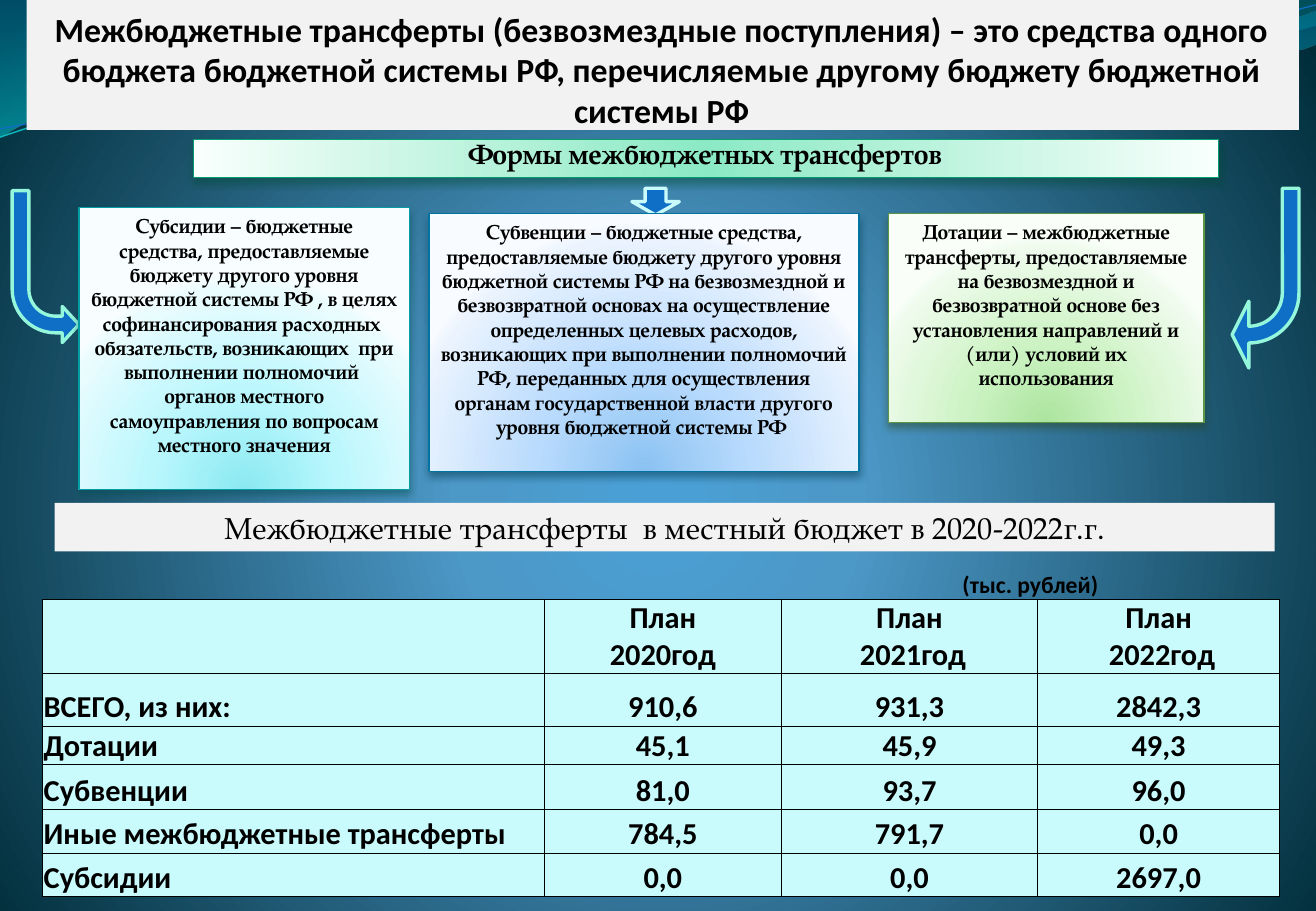
from dataclasses import dataclass

from lxml.etree import SubElement
from pptx import Presentation
from pptx.dml.color import RGBColor
from pptx.enum.shapes import MSO_SHAPE
from pptx.enum.text import MSO_ANCHOR, MSO_AUTO_SIZE, PP_ALIGN
from pptx.oxml.ns import qn
from pptx.util import Inches, Pt


@dataclass(frozen=True)
class Theme:
    sans: str = "Calibri"
    serif: str = "TeX Gyre Pagella"
    text: str = "000000"
    panel: str = "F2F2F2"
    cell: str = "C9FAFC"
    arrow: str = "0F6FC6"
    arrow_edge: str = "94F7DC"
    title_size: float = 20
    subtitle_size: float = 16.6
    card_size: float = 12
    table_size: float = 18
    unit_size: float = 14


THEME = Theme()
CIRCLE_BELOW = (50, 130, 50, -30)


# Formatting helpers
def set_gradient(properties, stops, angle=None, focus=None):
    """Replace the solid fill with stops of (position, colour, opacity)."""
    solid = properties.find(qn("a:solidFill"))
    gradient = SubElement(properties, qn("a:gradFill"), rotWithShape="1")
    properties.replace(solid, gradient)
    stop_list = SubElement(gradient, qn("a:gsLst"))
    for position, colour, *opacity in stops:
        stop = SubElement(stop_list, qn("a:gs"), pos=str(position * 1000))
        color = SubElement(stop, qn("a:srgbClr"), val=colour)
        if opacity:
            SubElement(color, qn("a:alpha"), val=str(opacity[0] * 1000))
    if focus:
        circle = SubElement(gradient, qn("a:path"), path="circle")
        sides = {side: str(value * 1000) for side, value in zip("ltrb", focus)}
        SubElement(circle, qn("a:fillToRect"), **sides)
    else:
        SubElement(gradient, qn("a:lin"), ang=str(angle * 60000), scaled="0")


def style_shape(shape, fill=None, line=None, width=0.75):
    shape.shadow.inherit = False
    if fill:
        shape.fill.solid()
        shape.fill.fore_color.rgb = RGBColor.from_string(fill)
    else:
        shape.fill.background()
    if line:
        shape.line.color.rgb = RGBColor.from_string(line)
        shape.line.width = Pt(width)
    else:
        shape.line.fill.background()


def add_shadow(shape, colour):
    effects = shape._element.spPr.find(qn("a:effectLst"))
    shadow = SubElement(effects, qn("a:outerShdw"), blurRad=str(Pt(4.5)),
                        dist=str(Pt(3)), dir="5400000", rotWithShape="0")
    color = SubElement(shadow, qn("a:srgbClr"), val=colour)
    SubElement(color, qn("a:alpha"), val="48000")


def place(shape, box):
    shape.left, shape.top, shape.width, shape.height = map(Inches, box)


def write(frame, lines, font, size, bold=True, align=PP_ALIGN.CENTER):
    """Each line is a paragraph; a vertical tab breaks a line inside it."""
    frame.word_wrap = True
    for index, line in enumerate(lines):
        paragraph = frame.add_paragraph() if index else frame.paragraphs[0]
        paragraph.alignment = align
        for part_index, part in enumerate(line.split("\v")):
            if part_index:
                paragraph.add_line_break()
            run = paragraph.add_run()
            run.text = part
            run.font.name, run.font.size, run.font.bold = font, Pt(size), bold
            run.font.color.rgb = RGBColor.from_string(THEME.text)


def set_insets(frame, left, top, right, bottom):
    frame.margin_left, frame.margin_top = Inches(left), Inches(top)
    frame.margin_right, frame.margin_bottom = Inches(right), Inches(bottom)


# Background with waves along the top
def add_wave(slide, points, closed):
    """Pairs are corners; six-number entries are cubic curves."""
    ends = [(Inches(entry[-2]), Inches(entry[-1])) for entry in points]
    builder = slide.shapes.build_freeform(*ends[0])
    builder.add_line_segments(ends[1:], close=closed)
    wave = builder.convert_to_shape()
    segments = wave._element.findall(".//" + qn("a:lnTo"))
    for segment, entry in zip(segments, points[1:]):
        if len(entry) == 6:
            segment.tag = qn("a:cubicBezTo")
            end = segment[0]
            for x, y in (entry[:2], entry[2:4]):
                end.addprevious(SubElement(segment, qn("a:pt"), x=str(Inches(x) - wave.left),
                                           y=str(Inches(y) - wave.top)))
    return wave


def add_background(slide):
    slide.background.fill.solid()
    set_gradient(slide._element.find(".//" + qn("p:bgPr")),
                 [(0, "4AA0D6"), (25, "4C98C7"), (100, "002C38")], focus=(10, 110, 10, 100))
    waves = [
        ([(0, -0.01), (4.77, -0.01), (5.15, 0.17, 7.19, 0.63, 8.22, 0.63),
          (9.24, 0.63, 10.38, 0.26, 10.83, 0.09), (10.85, 0.36),
          (10.65, 0.44, 9.42, 0.76, 8.08, 0.75), (6.74, 0.75, 4.14, 0.28, 2.79, 0.34),
          (1.4, 0.35, 0.5, 0.83, -0.01, 1.13)],
         [(0, "0074A1", 45), (100, "00C6CF", 55)], None, 0),
        ([(5.19, -0.01), (5.52, 0.11, 7.39, 0.62, 8.33, 0.65),
          (9.27, 0.69, 10.42, 0.32, 10.83, 0.21), (10.83, 0)],
         [(0, "00A1A9", 30), (80, "008BBF", 45)], None, 0),
        ([(0, 1.13), (0.52, 0.95, 1.71, 0.58, 3, 0.53), (4.28, 0.47, 6.42, 0.88, 7.72, 0.79),
          (9.02, 0.69, 10.17, 0.14, 10.81, -0.04)], None, "0AB8BF", 0.85),
        ([(0, 1.06), (0.51, 0.98, 1.77, 0.62, 3.07, 0.57), (4.36, 0.52, 6.47, 0.83, 7.76, 0.74),
          (9.06, 0.66, 10.2, 0.19, 10.83, 0.04)], None, "0F6FC6", 0.75),
    ]
    for index, (points, stops, line, width) in enumerate(waves):
        wave = add_wave(slide, points, bool(stops))
        style_shape(wave, stops and stops[0][1], line, width)
        if stops:
            set_gradient(wave._element.spPr, stops, angle=90)
        slide.shapes._spTree.insert(2 + index, wave._element)


# Title and heading of the transfer forms
def add_headings(slide, title_box, subtitle_box):
    title, subtitle = slide.shapes.title, slide.placeholders[1]
    place(title, title_box)
    style_shape(title, THEME.panel)
    write(title.text_frame, ["Межбюджетные трансферты (безвозмездные поступления) – это средства одного бюджета бюджетной системы РФ, перечисляемые другому бюджету бюджетной системы РФ"], THEME.sans, THEME.title_size)
    set_insets(title.text_frame, 0, 0, 0.02, 0)
    title.text_frame.vertical_anchor = MSO_ANCHOR.BOTTOM
    place(subtitle, subtitle_box)
    style_shape(subtitle, THEME.panel, "069C70")
    set_gradient(subtitle._element.spPr,
                 [(0, "F8FFFC"), (50, "8BE9C5"), (100, "F8FFFC")], angle=0)
    add_shadow(subtitle, "024B36")
    write(subtitle.text_frame, ["Формы межбюджетных трансфертов"], THEME.serif, THEME.subtitle_size)
    set_insets(subtitle.text_frame, 0, 0.05, 0.02, 0.05)
    subtitle.text_frame.vertical_anchor = MSO_ANCHOR.TOP
    paragraph = subtitle.text_frame.paragraphs[0]
    paragraph.line_spacing, paragraph.space_before = 0.7, Pt(3.3)
    for frame in (title.text_frame, subtitle.text_frame):
        frame.auto_size = MSO_AUTO_SIZE.NONE


def add_arrow(slide, kind, box, adjustments, edge=THEME.arrow_edge, flips=()):
    arrow = slide.shapes.add_shape(kind, *map(Inches, box))
    style_shape(arrow, THEME.arrow, edge, 2)
    for index, value in enumerate(adjustments):
        arrow.adjustments[index] = value
    for flip in flips:
        arrow._element.spPr.find(qn("a:xfrm")).set(flip, "1")


# Text panels
def add_panel(slide, box, text, size, fill, line=None, bold=True):
    panel = slide.shapes.add_shape(MSO_SHAPE.RECTANGLE, *map(Inches, box))
    style_shape(panel, fill, line)
    write(panel.text_frame, [text], THEME.serif, size, bold)
    panel.text_frame.vertical_anchor = MSO_ANCHOR.TOP
    return panel


def add_card(slide, box, text, colours, line, shadow):
    card = add_panel(slide, box, text, THEME.card_size, colours[0], line)
    set_gradient(card._element.spPr, list(zip((0, 43, 93, 100), colours)), focus=CIRCLE_BELOW)
    add_shadow(card, shadow)


# Table of transfers
def set_borders(cell, sides):
    properties = cell._tc.get_or_add_tcPr()
    for index, side in enumerate("LRTB"):
        border = SubElement(properties, qn("a:ln" + side), w=str(Pt(0.5)))
        properties.insert(index, border)
        if side in sides:
            SubElement(SubElement(border, qn("a:solidFill")), qn("a:srgbClr"), val=THEME.text)
        else:
            SubElement(border, qn("a:noFill"))


def add_transfer_table(slide, box):
    rows = [["", "", "(тыс. рублей)", ""],
            ["", "План\n2020год", "План\n 2021год", "План\n 2022год"],
            ["ВСЕГО, из них:", "910,6", "931,3", "2842,3"],
            ["Дотации", "45,1", "45,9", "49,3"],
            ["Субвенции", "81,0", "93,7", "96,0"],
            ["Иные межбюджетные трансферты", "784,5", "791,7", "0,0"],
            ["Субсидии", "0,0", "0,0", "2697,0"]]
    table = slide.shapes.add_table(len(rows), 4, *map(Inches, box)).table
    table.first_row = table.horz_banding = False
    for column, width in zip(table.columns, (4.13, 1.95, 2.11, 1.99)):
        column.width = Inches(width)
    for row, height in zip(table.rows, (0.24, 0.6, 0.43, 0.31, 0.37, 0.36, 0.36)):
        row.height = Inches(height)
    table.cell(0, 2).merge(table.cell(0, 3))
    for r, values in enumerate(rows):
        for c, value in enumerate(values):
            cell = table.cell(r, c)
            set_insets(cell, 0.01, 0 if r == 1 else 0.01, 0.01, 0)
            cell.vertical_anchor = MSO_ANCHOR.TOP if r == 1 else MSO_ANCHOR.BOTTOM
            if r:
                cell.fill.solid()
                cell.fill.fore_color.rgb = RGBColor.from_string(THEME.cell)
            else:
                cell.fill.background()
            set_borders(cell, "LRTB" if r else "B")
            if value:
                write(cell.text_frame, value.split("\n"), THEME.sans,
                      THEME.table_size if r else THEME.unit_size,
                      align=PP_ALIGN.CENTER if c else PP_ALIGN.LEFT)
            else:
                SubElement(cell.text_frame.paragraphs[0]._p, qn("a:endParaRPr"), sz="1000")


def main():
    presentation = Presentation()
    presentation.slide_width, presentation.slide_height = Inches(10.83), Inches(7.5)
    slide = presentation.slides.add_slide(presentation.slide_layouts[0])
    add_background(slide)
    add_headings(slide, (0.22, 0, 10.47, 1.07), (1.59, 1.15, 8.44, 0.31))
    add_arrow(slide, MSO_SHAPE.DOWN_ARROW, (5.2, 1.55, 0.39, 0.22), (0.44, 0.5), THEME.cell)
    add_arrow(slide, MSO_SHAPE.BENT_ARROW, (0.1, 1.57, 0.55, 1.25),
              (0.25, 0.27, 0.25, 0.65), flips=["flipV"])
    add_arrow(slide, MSO_SHAPE.BENT_ARROW, (10.14, 1.55, 0.55, 1.48),
              (0.25, 0.5, 0.25, 0.75), flips=["flipH", "flipV"])
    add_card(slide, (0.65, 1.71, 2.72, 2.32), "Субсидии – бюджетные\vсредства, предоставляемые бюджету другого уровня бюджетной системы РФ , в целях софинансирования расходных  обязательств, возникающих  при выполнении полномочий  органов местного самоуправления по вопросам местного значения",
             ("8BE9F1", "B9F7FD", "EAFCFE", "F8FEFF"), "069CA3", "024B4E")
    add_card(slide, (7.31, 1.76, 2.6, 1.72), "Дотации – межбюджетные трансферты, предоставляемые на безвозмездной и безвозвратной основе без установления направлений и (или) условий их использования",
             ("ACE49F", "CDF3C4", "EFFBED", "F9FFF8"), "5B9747", "2B4821")
    add_card(slide, (3.53, 1.76, 3.54, 2.12), "Субвенции – бюджетные средства, предоставляемые бюджету другого уровня бюджетной системы РФ на безвозмездной и безвозвратной основах на осуществление определенных целевых расходов, возникающих при выполнении полномочий РФ, переданных для осуществления органам государственной власти другого уровня бюджетной системы РФ ",
             ("8BC2F1", "B9DBFD", "EAF3FE", "F8FBFF"), "0074A1", "00374C")
    add_panel(slide, (0.45, 4.14, 10.04, 0.4), "Межбюджетные трансферты  в местный бюджет в 2020-2022г.г.",
              THEME.table_size, THEME.panel, bold=False)
    add_transfer_table(slide, (0.35, 4.69, 10.18, 2.67))
    presentation.save("out.pptx")


if __name__ == "__main__":
    main()
